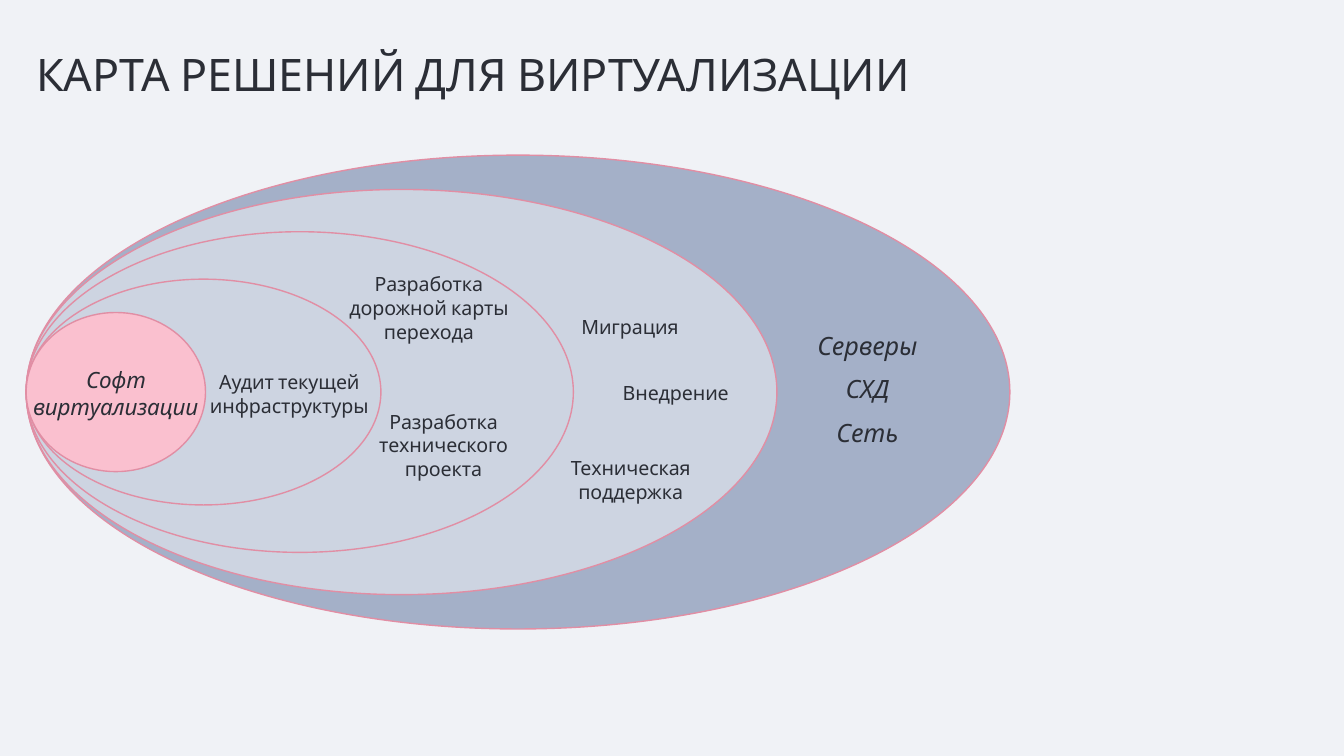
from dataclasses import dataclass

from pptx import Presentation
from pptx.dml.color import RGBColor
from pptx.enum.shapes import MSO_SHAPE
from pptx.enum.text import MSO_ANCHOR, MSO_AUTO_SIZE, PP_ALIGN
from pptx.util import Cm, Pt

ELLIPSE = MSO_SHAPE.OVAL
TOP = MSO_ANCHOR.TOP
FIXED_SIZE = MSO_AUTO_SIZE.NONE
GROW = MSO_AUTO_SIZE.SHAPE_TO_FIT_TEXT
LEFT, CENTER = PP_ALIGN.LEFT, PP_ALIGN.CENTER
TITLE_ONLY = 5


@dataclass(frozen=True)
class Theme:
    font: str = "Cabin"
    background: RGBColor = RGBColor(0xF0, 0xF2, 0xF6)
    text: RGBColor = RGBColor(0x2B, 0x2E, 0x36)
    outline: RGBColor = RGBColor(0xE1, 0x8E, 0xA4)
    hardware: RGBColor = RGBColor(0xA4, 0xB0, 0xC8)
    services: RGBColor = RGBColor(0xCD, 0xD4, 0xE1)
    software: RGBColor = RGBColor(0xFA, 0xC0, 0xCF)
    title_size: Pt = Pt(32)
    hardware_size: Pt = Pt(18)
    software_size: Pt = Pt(16)
    service_size: Pt = Pt(14)


THEME = Theme()

# All ellipses touch at their left ends and share one horizontal axis.
RINGS_LEFT, RINGS_AXIS = 0.66, 9.88
RINGS = [  # width, height, fill
    (24.79, 11.94, THEME.hardware),
    (18.92, 10.21, THEME.services),
    (13.79, 8.08, THEME.services),
    (8.94, 5.69, THEME.services),
    (4.52, 4.01, THEME.software),
]

SERVICES = [  # left, top, width, height, paragraphs
    (5.18, 9.27, 4.22, 1.24, ["Аудит текущей инфраструктуры"]),
    (8.79, 6.78, 4.04, 1.85, ["Разработка", "дорожной карты перехода"]),
    (9.4, 10.26, 3.56, 1.83, ["Разработка технического проекта"]),
    (14.35, 7.87, 3.05, 0.64, ["Миграция"]),
    (15.62, 9.55, 2.82, 0.64, ["Внедрение"]),
    (14.22, 11.43, 3.35, 1.24, ["Техническая поддержка"]),
]

HARDWARE = ["Серверы", "СХД", "Сеть"]
HARDWARE_TOP, HARDWARE_PITCH = 8.26, 1.1


def style_paragraph(para, size, align, italic=False):
    para.alignment = align
    para.font.name = THEME.font
    para.font.size = size
    para.font.italic = italic
    para.font.color.rgb = THEME.text


def set_title(page, text):
    title = page.shapes.title
    title.left, title.top = Cm(0.66), Cm(1.09)
    title.width, title.height = Cm(32.28), Cm(3.28)
    frame = title.text_frame
    frame.text = text
    frame.auto_size = FIXED_SIZE
    frame.vertical_anchor = TOP
    frame.margin_top = Cm(0.08)
    style_paragraph(frame.paragraphs[0], THEME.title_size, LEFT)


def add_ring(page, width, height, fill):
    ring = page.shapes.add_shape(
        ELLIPSE, Cm(RINGS_LEFT), Cm(RINGS_AXIS - height / 2), Cm(width), Cm(height))
    ring.shadow.inherit = False
    ring.fill.solid()
    ring.fill.fore_color.rgb = fill
    ring.line.color.rgb = THEME.outline
    ring.line.width = Pt(1)


def add_label(page, left, top, width, height, lines, size, italic=False):
    box = page.shapes.add_textbox(Cm(left), Cm(top), Cm(width), Cm(height))
    frame = box.text_frame
    frame.word_wrap = True
    frame.auto_size = GROW
    frame.margin_left = frame.margin_right = frame.margin_bottom = 0
    frame.margin_top = Cm(0.06)
    for index, line in enumerate(lines):
        para = frame.paragraphs[0]
        if index:
            para = frame.add_paragraph()
            para.space_before = Pt(1)
        span = para.add_run()
        span.text = line
        span._r.get_or_add_rPr().set("spc", "-10")
        style_paragraph(para, size, CENTER, italic)


def main():
    deck = Presentation()
    deck.slide_width, deck.slide_height = Cm(33.87), Cm(19.05)
    page = deck.slides.add_slide(deck.slide_layouts[TITLE_ONLY])
    page.background.fill.solid()
    page.background.fill.fore_color.rgb = THEME.background

    set_title(page, "КАРТА РЕШЕНИЙ ДЛЯ ВИРТУАЛИЗАЦИИ")
    for ring in RINGS:
        add_ring(page, *ring)
    add_label(page, 0.81, 9.17, 4.22, 1.4, ["Софт виртуализации"],
              THEME.software_size, italic=True)
    for service in SERVICES:
        add_label(page, *service, THEME.service_size)
    for index, name in enumerate(HARDWARE):
        add_label(page, 20.45, HARDWARE_TOP + index * HARDWARE_PITCH, 2.82, 0.81,
                  [name], THEME.hardware_size, italic=True)

    deck.save("out.pptx")


if __name__ == "__main__":
    main()
